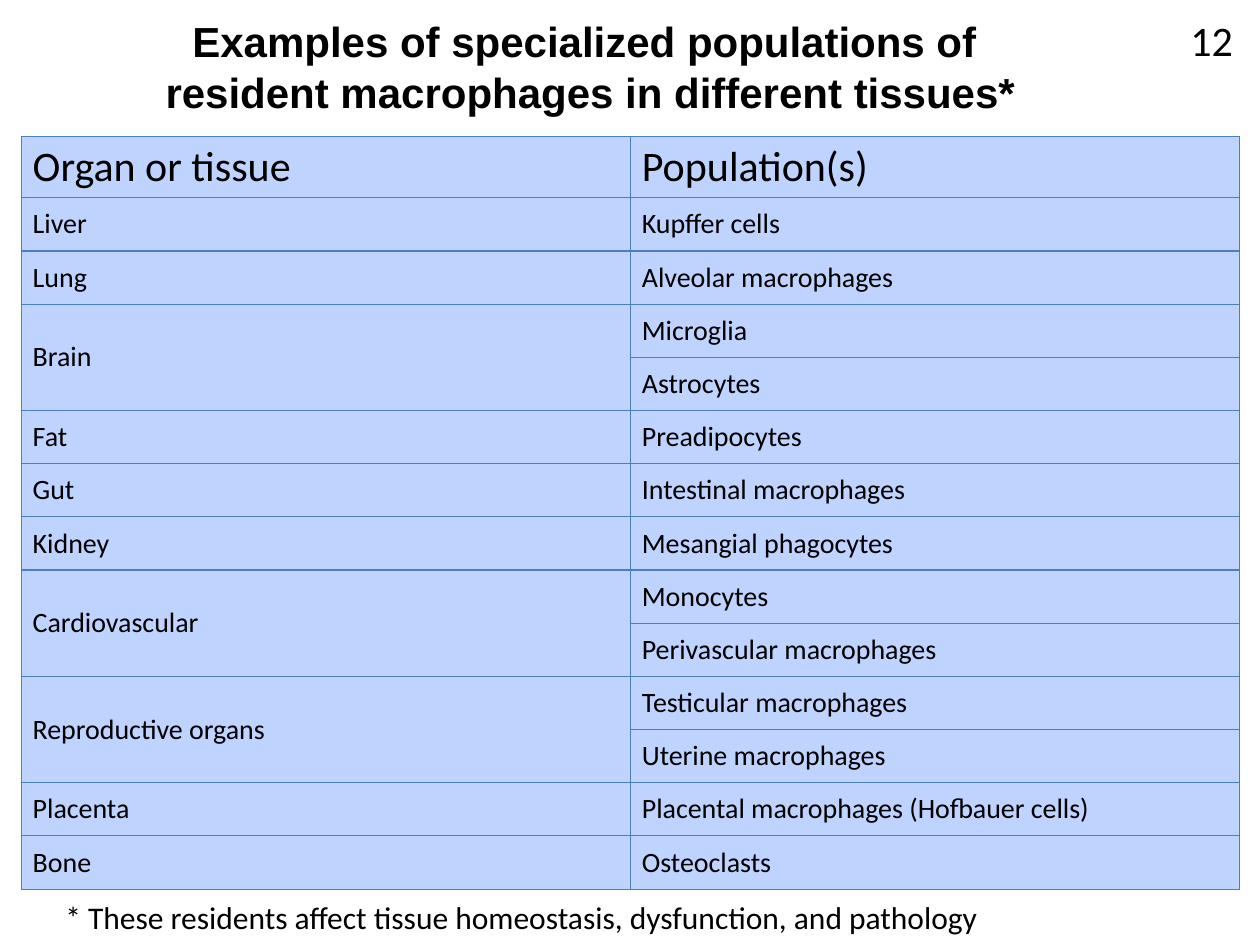
from dataclasses import dataclass

from lxml.etree import SubElement
from pptx import Presentation
from pptx.dml.color import RGBColor
from pptx.enum.text import MSO_ANCHOR, MSO_AUTO_SIZE, PP_ALIGN
from pptx.oxml.ns import qn
from pptx.util import Inches, Pt

COLORS = {"text": "000000", "cell": "BFD3FF", "border": "4B7EBC"}
HEAD = ("Organ or tissue", "Population(s)")
HEAD_HIGH, BODY_HIGH = 0.49, 5.49


@dataclass
class Organ:
    name: str
    cells: tuple[str, ...]


@dataclass
class Label:
    lines: tuple[str, ...]
    box: tuple[float, float, float, float]
    size: int
    font: str = "Calibri"
    bold: bool = False
    wrap: bool = False
    align: PP_ALIGN = PP_ALIGN.LEFT
    anchor: MSO_ANCHOR = MSO_ANCHOR.TOP


ORGANS = [
    Organ("Liver", ("Kupffer cells",)),
    Organ("Lung", ("Alveolar macrophages",)),
    Organ("Brain", ("Microglia", "Astrocytes")),
    Organ("Fat", ("Preadipocytes",)),
    Organ("Gut", ("Intestinal macrophages",)),
    Organ("Kidney", ("Mesangial phagocytes",)),
    Organ("Cardiovascular", ("Monocytes", "Perivascular macrophages")),
    Organ("Reproductive organs", ("Testicular macrophages", "Uterine macrophages")),
    Organ("Placenta", ("Placental macrophages (Hofbauer cells)",)),
    Organ("Bone", ("Osteoclasts",)),
]

LABELS = [
    Label(("Examples of specialized populations of ",
           "resident macrophages in different tissues*"),
          (1.18, 0.07, 7.01, 0.91), 24, font="Arial", bold=True,
          align=PP_ALIGN.CENTER, anchor=MSO_ANCHOR.MIDDLE),
    Label(("* These residents affect tissue homeostasis, dysfunction, and pathology",),
          (0.42, 7.08, 10, 0.4), 18, wrap=True),
    Label(("12",), (9.35, 0.07, 0.54, 0.5), 24),
]


def add_run(para, text: str, size: int, font: str = "Calibri", bold: bool = False) -> None:
    run = para.add_run()
    run.text = text
    run.font.size = Pt(size)
    run.font.name = font
    run.font.bold = bold
    run.font.color.rgb = RGBColor.from_string(COLORS["text"])


def add_label(slide, label: Label) -> None:
    frame = slide.shapes.add_textbox(*map(Inches, label.box)).text_frame
    frame.word_wrap = label.wrap
    frame.auto_size = MSO_AUTO_SIZE.SHAPE_TO_FIT_TEXT
    frame.vertical_anchor = label.anchor
    for i, line in enumerate(label.lines):
        para = frame.add_paragraph() if i else frame.paragraphs[0]
        para.alignment = label.align
        add_run(para, line, label.size, label.font, label.bold)


def style_cell(cell) -> None:
    """Set margins, borders and fill; the borders must come before the fill."""
    cell.vertical_anchor = MSO_ANCHOR.MIDDLE
    cell.margin_left = cell.margin_right = Inches(0.09)
    cell.margin_top = cell.margin_bottom = Inches(0.04)
    props = cell._tc.get_or_add_tcPr()
    for side in ("a:lnL", "a:lnR", "a:lnT", "a:lnB"):
        line = SubElement(props, qn(side), w=str(Pt(0.75)))
        fill = SubElement(line, qn("a:solidFill"))
        SubElement(fill, qn("a:srgbClr"), val=COLORS["border"])
    cell.fill.solid()
    cell.fill.fore_color.rgb = RGBColor.from_string(COLORS["cell"])


def add_grid(slide, organs: list[Organ]) -> None:
    count = sum(len(organ.cells) for organ in organs)
    grid = slide.shapes.add_table(
        count + 1, 2, Inches(0.17), Inches(1.08),
        Inches(9.67), Inches(HEAD_HIGH + BODY_HIGH)).table
    for i, row in enumerate(grid.rows):
        row.height = Inches(BODY_HIGH / count if i else HEAD_HIGH)
        for cell in row.cells:
            style_cell(cell)

    def write(row: int, col: int, text: str, size: int = 16) -> None:
        add_run(grid.cell(row, col).text_frame.paragraphs[0], text, size)

    for col, text in enumerate(HEAD):
        write(0, col, text, 24)
    top = 1
    for organ in organs:
        last = top + len(organ.cells) - 1
        if last > top:
            grid.cell(top, 0).merge(grid.cell(last, 0))
        write(top, 0, organ.name)
        for row, text in enumerate(organ.cells, top):
            write(row, 1, text)
        top = last + 1


def main() -> None:
    deck = Presentation()
    deck.slide_width, deck.slide_height = Inches(10), Inches(7.5)
    slide = deck.slides.add_slide(deck.slide_layouts[6])
    add_grid(slide, ORGANS)
    for label in LABELS:
        add_label(slide, label)
    deck.save("out.pptx")


if __name__ == "__main__":
    main()
